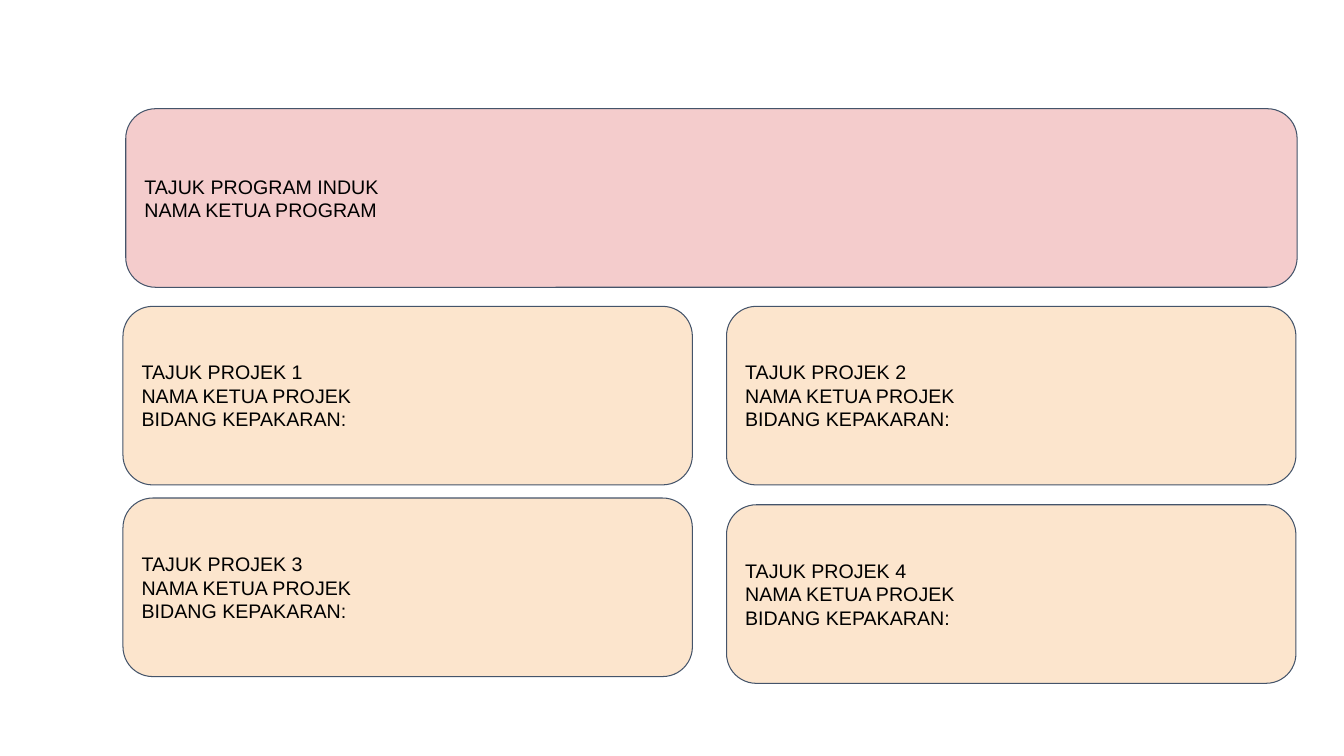
from dataclasses import dataclass

from pptx import Presentation
from pptx.dml.color import RGBColor
from pptx.enum.shapes import MSO_SHAPE
from pptx.enum.text import MSO_ANCHOR, PP_ALIGN
from pptx.slide import Slide
from pptx.util import Cm, Pt

ROUNDED = MSO_SHAPE.ROUNDED_RECTANGLE
MIDDLE = MSO_ANCHOR.MIDDLE
LEFT = PP_ALIGN.LEFT

CARD_HEIGHT = 4.5
PROJECT_WIDTH = 14.35
LEFT_COLUMN, RIGHT_COLUMN = 3.1, 18.31
PROGRAM_FILL, PROJECT_FILL = "F4CCCC", "FCE5CD"
OUTLINE, INK = "44546A", "000000"


@dataclass(frozen=True)
class Card:
    """A rounded box with its place in centimetres and its lines of text."""

    left: float
    top: float
    width: float
    fill: str
    lines: tuple[str, ...]


def project_card(number: int, left: float, top: float) -> Card:
    """Describe the card of one numbered project."""
    lines = (f"TAJUK PROJEK {number}", "NAMA KETUA PROJEK", "BIDANG KEPAKARAN:")
    return Card(left, top, PROJECT_WIDTH, PROJECT_FILL, lines)


CARDS = (
    Card(3.17, 2.74, 29.52, PROGRAM_FILL, ("TAJUK PROGRAM INDUK", "NAMA KETUA PROGRAM")),
    project_card(1, LEFT_COLUMN, 7.72),
    project_card(3, LEFT_COLUMN, 12.55),
    project_card(2, RIGHT_COLUMN, 7.72),
    project_card(4, RIGHT_COLUMN, 12.72),
)


def color(value: str) -> RGBColor:
    """Turn a hex string into a colour."""
    return RGBColor.from_string(value)


def draw_card(page: Slide, card: Card) -> None:
    """Draw one card on the page."""
    box = page.shapes.add_shape(
        ROUNDED, Cm(card.left), Cm(card.top), Cm(card.width), Cm(CARD_HEIGHT)
    )
    box.shadow.inherit = False
    box.fill.solid()
    box.fill.fore_color.rgb = color(card.fill)
    box.line.color.rgb = color(OUTLINE)
    box.line.width = Pt(0.75)

    frame = box.text_frame
    frame.word_wrap = True
    frame.vertical_anchor = MIDDLE
    frame.margin_left = frame.margin_right = Cm(0.25)
    frame.margin_top = frame.margin_bottom = Cm(0.25)
    frame.text = "\n".join(card.lines)
    for para in frame.paragraphs:
        para.alignment = LEFT
        for span in para.runs:
            span.font.name = "Arial"
            span.font.size = Pt(14)
            span.font.color.rgb = color(INK)


def main() -> None:
    """Build the slide and save the deck."""
    deck = Presentation()
    deck.slide_width, deck.slide_height = Cm(33.87), Cm(19.05)
    blank_layout = deck.slide_layouts[6]
    page = deck.slides.add_slide(blank_layout)
    for card in CARDS:
        draw_card(page, card)
    deck.save("out.pptx")


if __name__ == "__main__":
    main()
